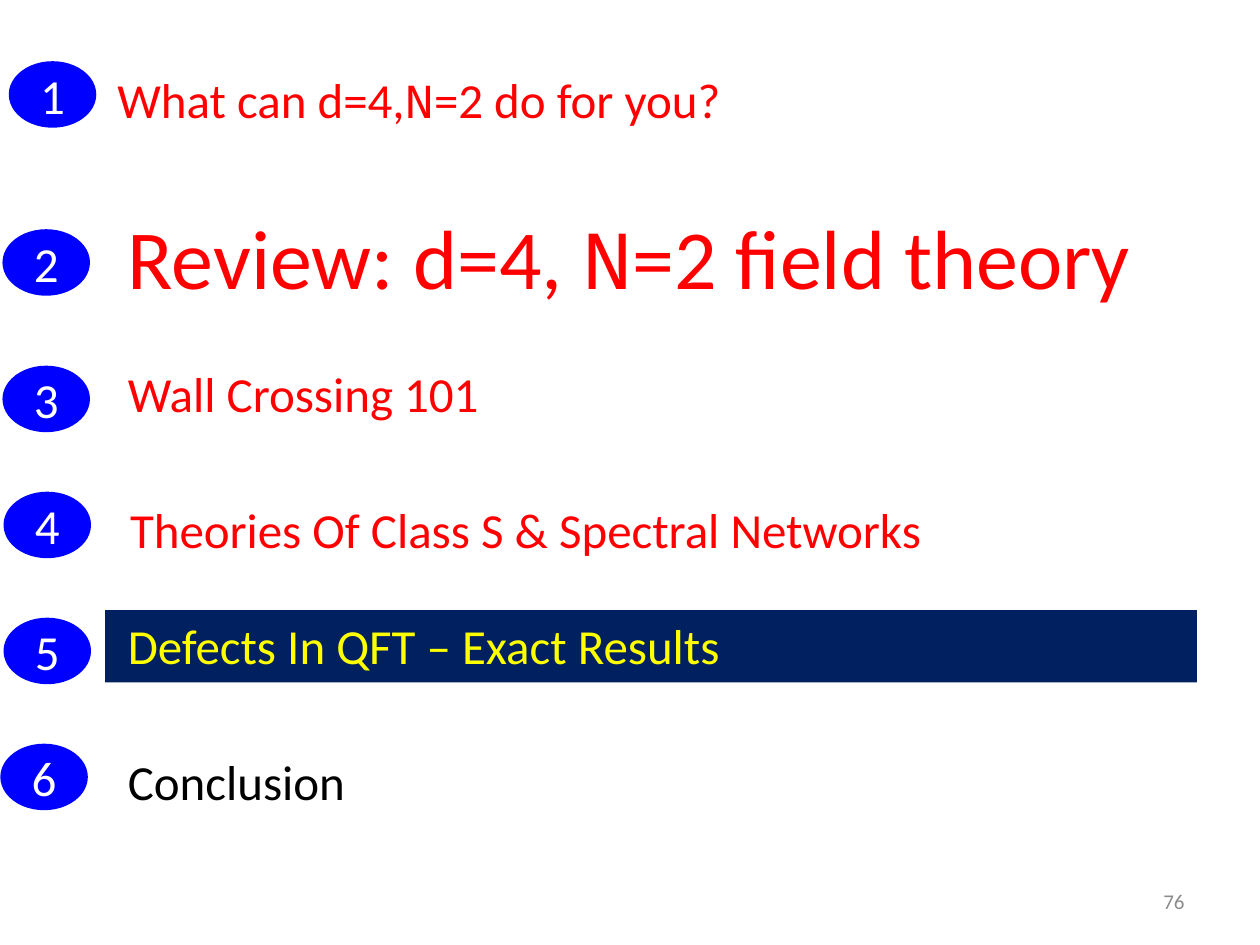
"""Build a numbered talk outline with the current section highlighted."""
from pptx import Presentation, util as u
from pptx.dml.color import RGBColor
from pptx.enum import shapes, text

HUES = {"past": "FF0000", "now": "FFFF00", "next": "000000", "band": "002060",
        "badge": "0000FF", "digit": "FFFFFF", "page": "8C8C8C"}
WIDE, HIGH = u.Inches(10), u.Inches(7.5)
COLS, ROWS = 120, 90
MONO = "Courier New"

BADGES = [(1, 6), (0.4, 22), (0.4, 35), (0.5, 47), (0.5, 59), (0.2, 71)]
TOPICS = [
    ((10, 6, 62.2, 6.9), ["What can d=4,", "N", "=2 do for you?"], "past", 28, False),
    ((11, 19, 101.6, 10.9), ["Review: d=4, ", "N", "=2 field theory"], "past", 48, False),
    ((11, 34, 88.2, 6.9), ["Wall Crossing 101"], "past", 28, True),
    ((11.2, 47, 98.8, 12.5), ["Theories Of Class S & Spectral Networks"], "past", 28, True),
    ((11, 58, 88.2, 6.9), ["Defects In QFT – Exact Results"], "now", 28, True),
    ((11, 71, 88.2, 6.9), ["Conclusion"], "next", 28, True),
]


def place(col, row, wide, high):
    """Turn grid columns and rows into lengths."""
    return (int(WIDE * col / COLS), int(HIGH * row / ROWS),
            int(WIDE * wide / COLS), int(HIGH * high / ROWS))


def tint(hue):
    """Return the named colour."""
    return RGBColor.from_string(HUES[hue])


def style(run, size, hue, face="Calibri"):
    """Set the font of a run."""
    run.font.size = u.Pt(size)
    run.font.name = face
    run.font.color.rgb = tint(hue)


def add_solid(slide, kind, box, hue):
    """Add a flat filled shape."""
    shape = slide.shapes.add_shape(kind, *place(*box))
    shape.shadow.inherit = False
    shape.fill.solid()
    shape.fill.fore_color.rgb = tint(hue)
    shape.line.fill.background()
    return shape


def add_badge(slide, num, col, row):
    """Add a numbered oval."""
    oval = add_solid(slide, shapes.MSO_SHAPE.OVAL, (col, row, 8, 6), "badge")
    oval.line.color.rgb = tint("badge")
    oval.line.width = u.Pt(2)
    frame = oval.text_frame
    frame.text = str(num)
    frame.vertical_anchor = text.MSO_ANCHOR.MIDDLE
    para = frame.paragraphs[0]
    para.alignment = text.PP_ALIGN.CENTER
    style(para.runs[0], 28, "digit")


def add_text(slide, box, parts, hue, size, wrap=True):
    """Add a text box, its lone N set in the fixed-width face."""
    frame = slide.shapes.add_textbox(*place(*box)).text_frame
    frame.word_wrap = wrap
    para = frame.paragraphs[0]
    for part in parts:
        run = para.add_run()
        run.text = part
        style(run, size, hue, MONO if part == "N" else "Calibri")
    return frame


def add_page(slide, num):
    """Add the page number at the lower right."""
    frame = add_text(slide, (86, 83.4, 28, 4.8), [str(num)], "page", 12)
    frame.vertical_anchor = text.MSO_ANCHOR.MIDDLE
    frame.paragraphs[0].alignment = text.PP_ALIGN.RIGHT


def main():
    """Build and save the slide."""
    deck = Presentation()
    deck.slide_width, deck.slide_height = WIDE, HIGH
    slide = deck.slides.add_slide(deck.slide_layouts.get_by_name("Blank"))
    add_solid(slide, shapes.MSO_SHAPE.RECTANGLE, (10, 58.1, 104, 6.9), "band")
    for num, (spot, topic) in enumerate(zip(BADGES, TOPICS), 1):
        add_badge(slide, num, *spot)
        add_text(slide, *topic)
    add_page(slide, 76)
    deck.save("out.pptx")


if __name__ == "__main__":
    main()
